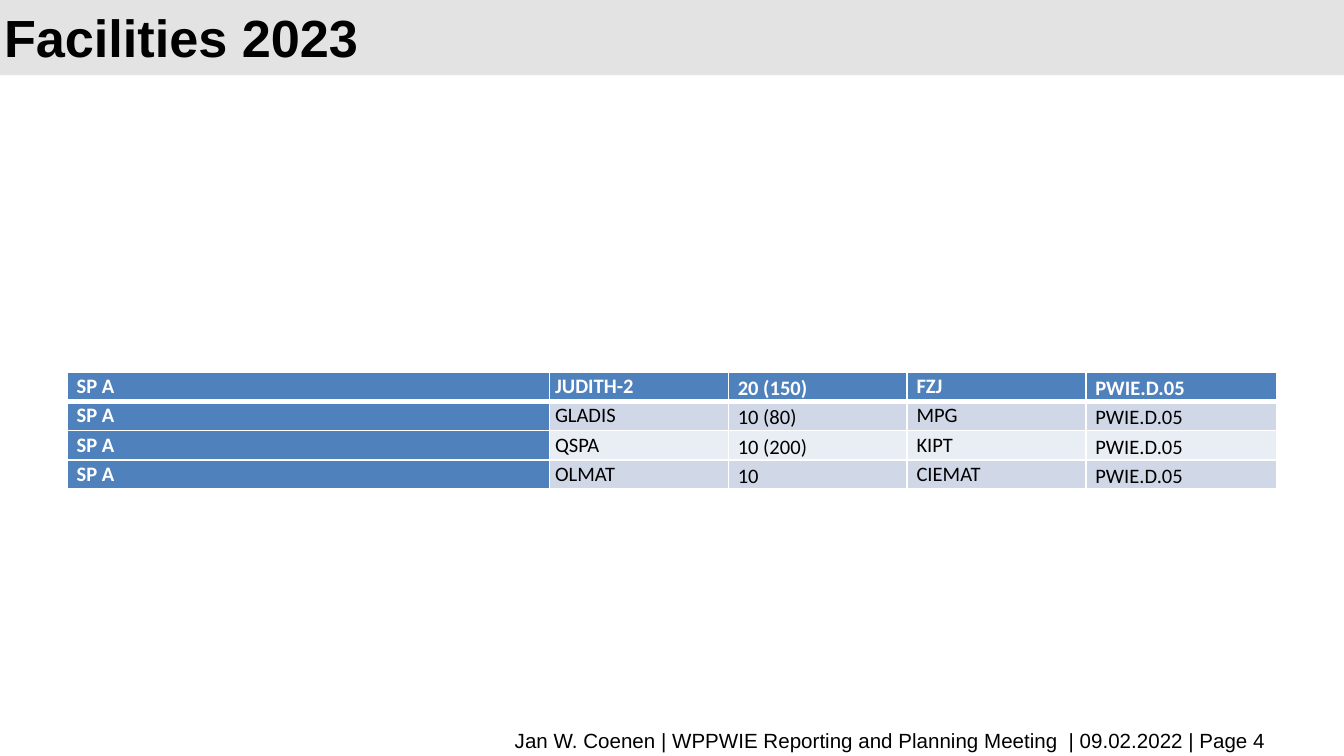
from dataclasses import dataclass

from lxml import etree
from pptx import Presentation
from pptx.dml.color import RGBColor
from pptx.enum.shapes import MSO_SHAPE
from pptx.enum.text import MSO_ANCHOR, MSO_AUTO_SIZE, PP_ALIGN
from pptx.oxml.ns import qn
from pptx.util import Inches, Pt

RECTANGLE = MSO_SHAPE.RECTANGLE
MIDDLE, TOP = MSO_ANCHOR.MIDDLE, MSO_ANCHOR.TOP
NO_AUTOFIT = MSO_AUTO_SIZE.NONE
LEFT, RIGHT, JUSTIFY = PP_ALIGN.LEFT, PP_ALIGN.RIGHT, PP_ALIGN.JUSTIFY
TITLE_ONLY_LAYOUT = 5


@dataclass(frozen=True)
class Theme:
    heading_font: str = "Arial"
    table_font: str = "Calibri"
    title_size: int = 28
    small_size: int = 11
    black: str = "000000"
    white: str = "FFFFFF"
    band: str = "E3E3E3"
    header: str = "4F81BD"
    row_fills: tuple = ("D0D8E8", "E9EDF4")


@dataclass(frozen=True)
class Column:
    width: float
    inset: float
    align: PP_ALIGN
    line_spacing: float
    space_after: int


@dataclass(frozen=True)
class Facility:
    project: str
    name: str
    days: str
    laboratory: str
    deliverable: str

    def values(self) -> tuple:
        return self.project, self.name, self.days, self.laboratory, self.deliverable


THEME = Theme()
COLUMNS = [
    Column(3.59, 0.07, JUSTIFY, 1.07, 5),
    Column(1.33, 0.04, JUSTIFY, 1.07, 5),
    Column(1.33, 0.07, LEFT, 1.15, 2),
    Column(1.33, 0.07, JUSTIFY, 1.07, 5),
    Column(1.42, 0.07, LEFT, 1.15, 2),
]
FACILITIES = [
    Facility("SP A", "JUDITH-2", "20 (150)", "FZJ", "PWIE.D.05"),
    Facility("SP A", "GLADIS", "10 (80)", "MPG", "PWIE.D.05"),
    Facility("SP A", "QSPA", "10 (200)", "KIPT", "PWIE.D.05"),
    Facility("SP A", "OLMAT", "10", "CIEMAT", "PWIE.D.05"),
]
ROW_HEIGHT = 0.19


def format_font(paragraph, name: str, size: int, color: str, bold: bool = False) -> None:
    for run in paragraph.runs:
        run.font.name = name
        run.font.size = Pt(size)
        run.font.bold = bold
        run.font.color.rgb = RGBColor.from_string(color)


def set_borders(cell, color: str, top: int, bottom: int) -> None:
    """Cell borders must come before the fill, in the order L, R, T, B."""
    properties = cell._tc.get_or_add_tcPr()
    sides = {"a:lnL": 1, "a:lnR": 1, "a:lnT": top, "a:lnB": bottom}
    for position, (tag, width) in enumerate(sides.items()):
        line = etree.Element(qn(tag), w=str(Pt(width)))
        fill = etree.SubElement(line, qn("a:solidFill"))
        etree.SubElement(fill, qn("a:srgbClr"), val=color)
        properties.insert(position, line)


def add_title(slide, text: str) -> None:
    title = slide.shapes.title
    title.left, title.top = Inches(-0.07), Inches(0.09)
    title.width, title.height = Inches(8.25), Inches(0.38)
    frame = title.text_frame
    frame.text = text
    frame.auto_size = NO_AUTOFIT
    frame.vertical_anchor = MIDDLE
    paragraph = frame.paragraphs[0]
    paragraph.alignment = LEFT
    paragraph.line_spacing = Pt(32)
    format_font(paragraph, THEME.heading_font, THEME.title_size, THEME.black, True)


def add_title_band(slide) -> None:
    band = slide.shapes.add_shape(RECTANGLE, 0, 0, Inches(10), Inches(0.56))
    band.shadow.inherit = False
    band.fill.solid()
    band.fill.fore_color.rgb = RGBColor.from_string(THEME.band)
    band.line.fill.background()
    # Keep the band behind the title
    slide.shapes.title.element.addprevious(band.element)


def add_footer(slide, text: str) -> None:
    footer = slide.shapes.add_textbox(Inches(0.51), Inches(5.37), Inches(9.01), Inches(0.22))
    frame = footer.text_frame
    frame.word_wrap = True
    frame.text = text
    paragraph = frame.paragraphs[0]
    paragraph.alignment = RIGHT
    format_font(paragraph, THEME.heading_font, THEME.small_size, THEME.black)


def fill_cell(cell, text: str, column: Column, row: int, is_header: bool) -> None:
    cell.margin_left = cell.margin_right = Inches(column.inset)
    cell.margin_top = cell.margin_bottom = 0
    cell.vertical_anchor = TOP
    cell.fill.solid()
    fill = THEME.header if is_header else THEME.row_fills[(row - 1) % 2]
    cell.fill.fore_color.rgb = RGBColor.from_string(fill)
    set_borders(cell, THEME.white, 3 if row == 1 else 1, 3 if row == 0 else 1)
    cell.text_frame.text = text
    paragraph = cell.text_frame.paragraphs[0]
    paragraph.alignment = column.align
    paragraph.line_spacing = column.line_spacing
    paragraph.space_after = Pt(column.space_after)
    color = THEME.white if is_header else THEME.black
    format_font(paragraph, THEME.table_font, THEME.small_size, color, is_header)


def add_facility_table(slide) -> None:
    width = sum(column.width for column in COLUMNS)
    table = slide.shapes.add_table(
        len(FACILITIES), len(COLUMNS), Inches(0.5), Inches(2.77),
        Inches(width), Inches(ROW_HEIGHT * len(FACILITIES)),
    ).table
    table.first_col = True
    for index, column in enumerate(COLUMNS):
        table.columns[index].width = Inches(column.width)
    for row, facility in enumerate(FACILITIES):
        table.rows[row].height = Inches(ROW_HEIGHT)
        for index, (column, text) in enumerate(zip(COLUMNS, facility.values())):
            fill_cell(table.cell(row, index), text, column, row, row == 0 or index == 0)


def main() -> None:
    presentation = Presentation()
    # Widescreen, 16:9
    presentation.slide_width = Inches(10)
    presentation.slide_height = Inches(10 * 9 / 16)
    slide = presentation.slides.add_slide(presentation.slide_layouts[TITLE_ONLY_LAYOUT])

    # Heading
    add_title(slide, "Facilities 2023")
    add_title_band(slide)

    # Facilities and footer
    add_facility_table(slide)
    add_footer(slide, "Jan W. Coenen | WPPWIE Reporting and Planning Meeting  | 09.02.2022 | Page 4")

    presentation.save("out.pptx")


if __name__ == "__main__":
    main()
